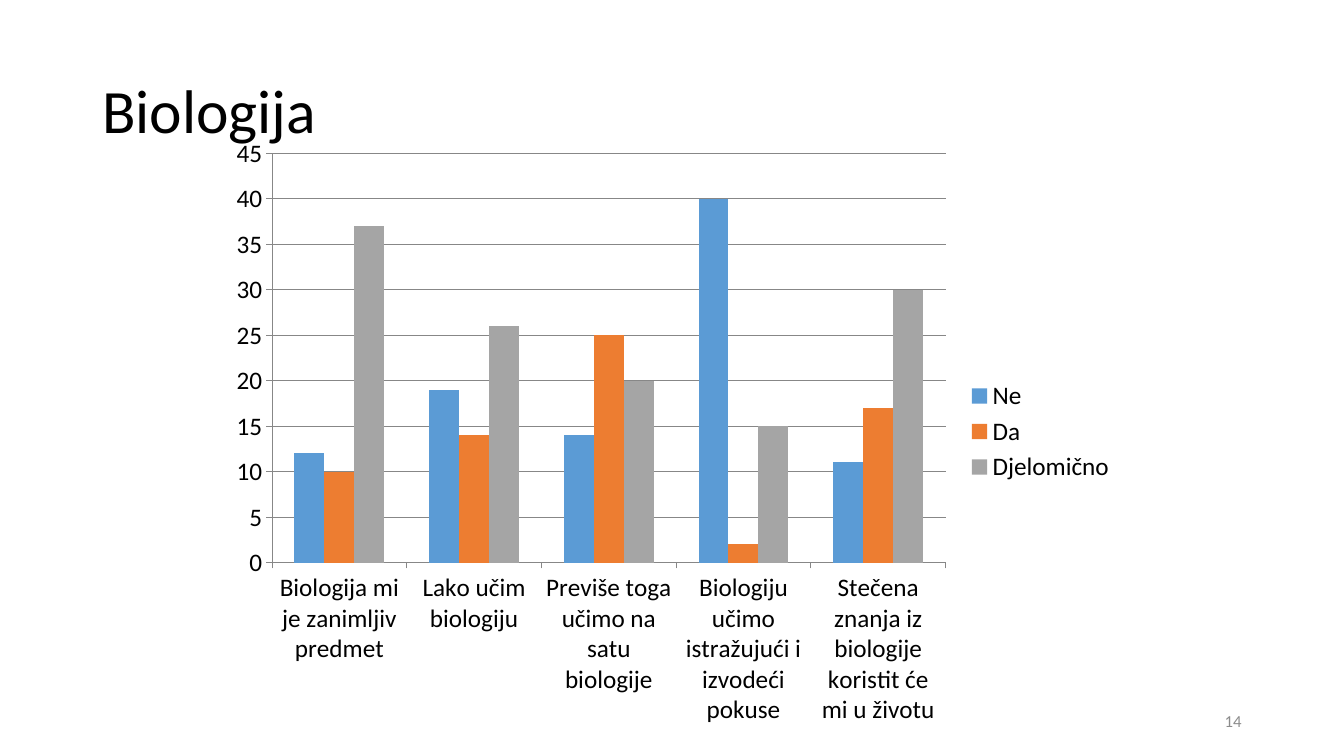
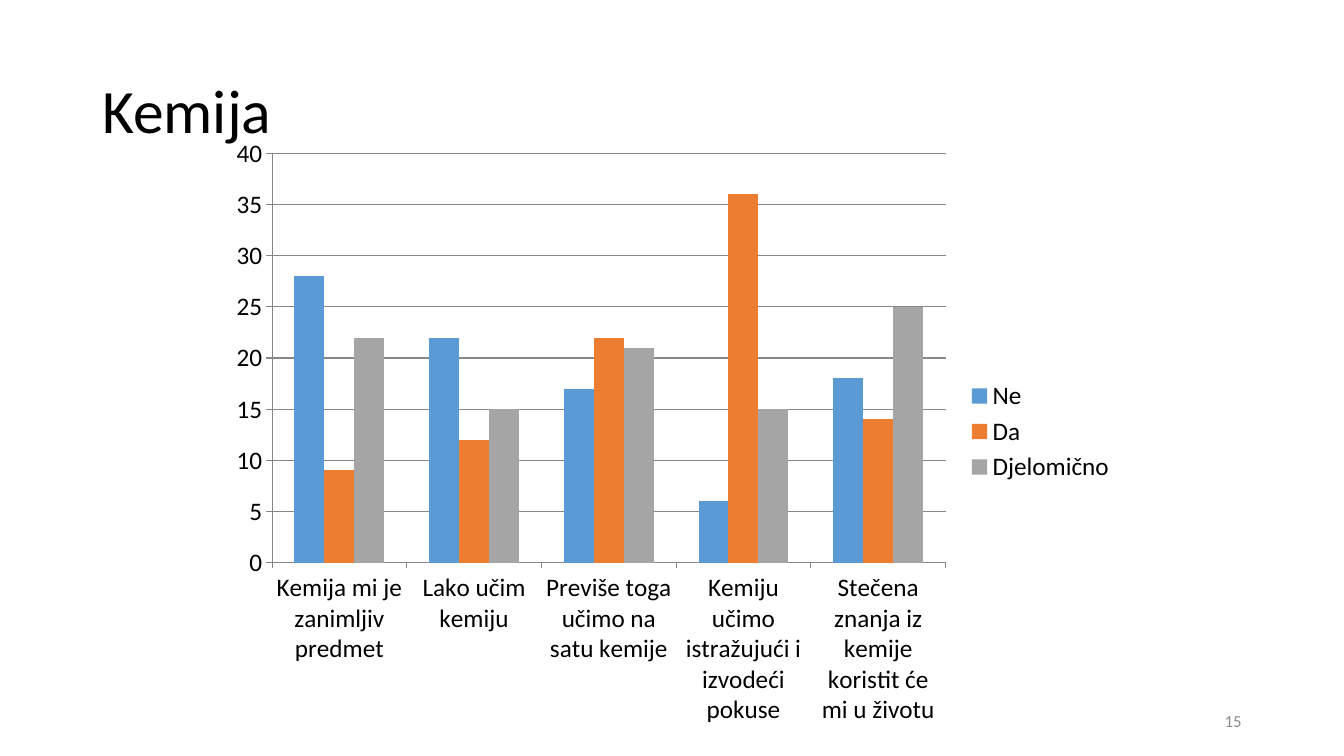
from pptx import Presentation
from pptx import util as u
from pptx.chart import data as chart_data
from pptx.dml.color import RGBColor
from pptx.enum import chart as charts, text

FONT = "Calibri"
BLACK = RGBColor(0x00, 0x00, 0x00)
NUMBER_GRAY = RGBColor(0x8C, 0x8C, 0x8C)
AXIS_GRAY = RGBColor(0x87, 0x87, 0x87)
ANSWERS = {
    "Ne": RGBColor(0x5B, 0x9B, 0xD5),
    "Da": RGBColor(0xED, 0x7D, 0x31),
    "Djelomično": RGBColor(0xA5, 0xA5, 0xA5),
}
FIRST_NUMBER = 14

SUBJECTS = [
    {
        "title": "Biologija",
        "statements": [
            "Biologija mi je zanimljiv predmet",
            "Lako učim biologiju",
            "Previše toga učimo na satu biologije",
            "Biologiju učimo istražujući i izvodeći pokuse",
            "Stečena znanja iz biologije koristit će mi u životu",
        ],
        "counts": [(12, 19, 14, 40, 11), (10, 14, 25, 2, 17), (37, 26, 20, 15, 30)],
        "maximum": 45,
    },
    {
        "title": "Kemija",
        "statements": [
            "Kemija mi je zanimljiv predmet",
            "Lako učim kemiju",
            "Previše toga učimo na satu kemije",
            "Kemiju učimo istražujući i izvodeći pokuse",
            "Stečena znanja iz kemije koristit će mi u životu",
        ],
        "counts": [(28, 22, 17, 6, 18), (9, 12, 22, 36, 14), (22, 15, 21, 15, 25)],
        "maximum": 40,
    },
]


def add_text(page, words, *, left, top, width, height, size, color,
             align=text.PP_ALIGN.LEFT, line_spacing=1.0):
    box = page.shapes.add_textbox(u.Pt(left), u.Pt(top), u.Pt(width), u.Pt(height))
    frame = box.text_frame
    frame.word_wrap = True
    frame.vertical_anchor = text.MSO_ANCHOR.MIDDLE
    para = frame.paragraphs[0]
    para.alignment = align
    para.line_spacing = line_spacing
    span = para.add_run()
    span.text = words
    span.font.name = FONT
    span.font.size = u.Pt(size)
    span.font.color.rgb = color


deck = Presentation()
deck.slide_width = u.Pt(960)
deck.slide_height = u.Pt(540)

for number, subject in enumerate(SUBJECTS, FIRST_NUMBER):
    page = deck.slides.add_slide(deck.slide_layouts[6])
    add_text(page, subject["title"], left=66, top=28.75, width=828, height=104.4,
             size=44, color=BLACK, line_spacing=0.9)

    survey = chart_data.CategoryChartData()
    survey.categories = subject["statements"]
    for answer, counts in zip(ANSWERS, subject["counts"]):
        survey.add_series(answer, counts)
    chart = page.shapes.add_chart(
        charts.XL_CHART_TYPE.COLUMN_CLUSTERED,
        u.Pt(156), u.Pt(90), u.Pt(648), u.Pt(436.5), survey,
    ).chart
    chart.has_title = False
    chart.font.name = FONT
    chart.font.size = u.Pt(18)
    chart.font.color.rgb = BLACK

    chart.has_legend = True
    chart.legend.position = charts.XL_LEGEND_POSITION.RIGHT
    chart.legend.include_in_layout = False

    plot = chart.plots[0]
    plot.gap_width = 150
    plot.overlap = 0
    plot.vary_by_categories = False
    for series, color in zip(plot.series, ANSWERS.values()):
        series.format.fill.solid()
        series.format.fill.fore_color.rgb = color

    counts_axis = chart.value_axis
    counts_axis.minimum_scale = 0
    counts_axis.maximum_scale = subject["maximum"]
    counts_axis.major_unit = 5
    counts_axis.has_major_gridlines = True
    for axis in (chart.category_axis, counts_axis):
        axis.major_tick_mark = charts.XL_TICK_MARK.OUTSIDE
        axis.minor_tick_mark = charts.XL_TICK_MARK.NONE
    for part in (chart.category_axis, counts_axis, counts_axis.major_gridlines):
        part.format.line.color.rgb = AXIS_GRAY
        part.format.line.width = u.Pt(0.75)

    add_text(page, str(number), left=678, top=500.5, width=216, height=28.75,
             size=12, color=NUMBER_GRAY, align=text.PP_ALIGN.RIGHT)

deck.save("out.pptx")
